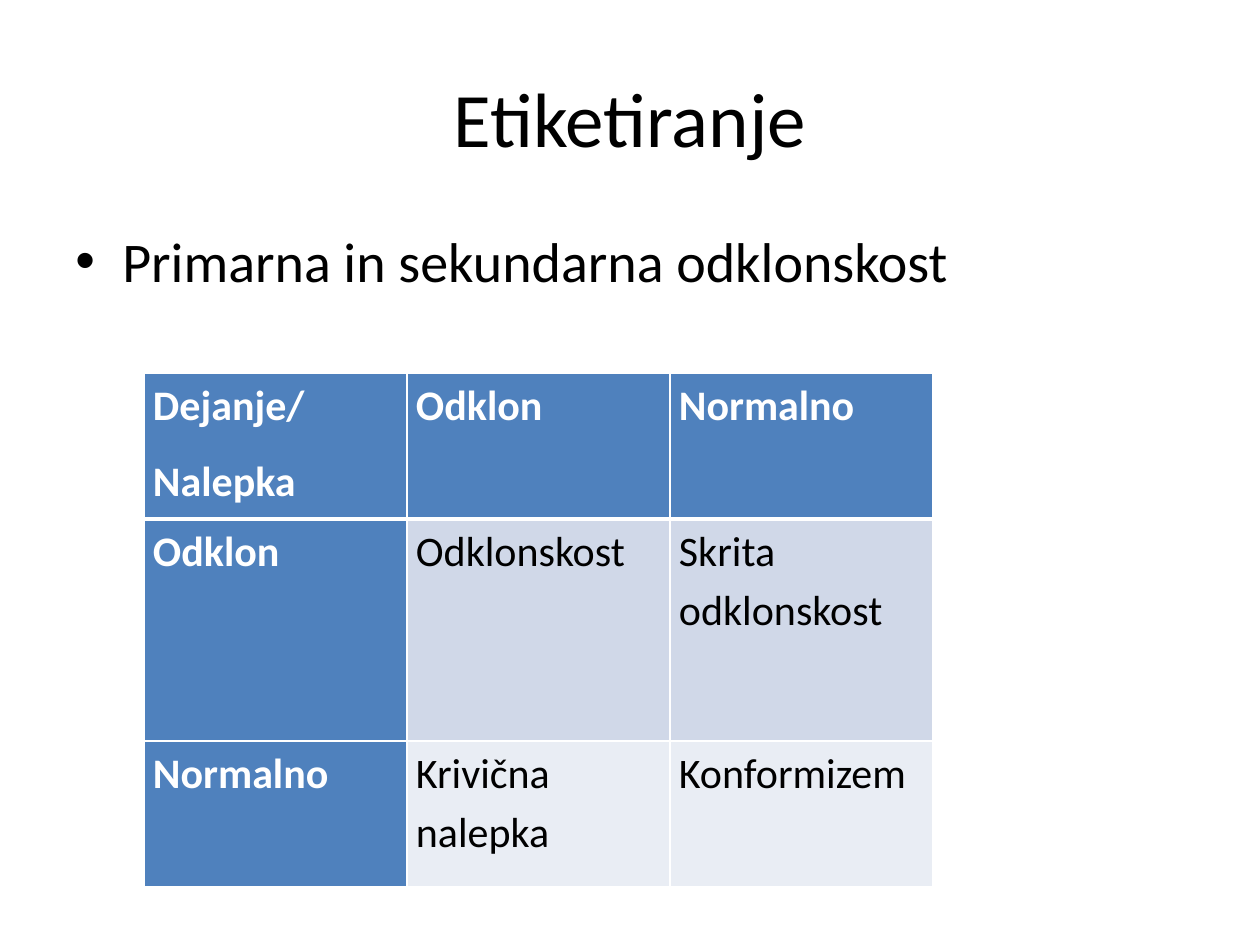
from lxml.etree import SubElement
from pptx import Presentation
from pptx.dml.color import RGBColor
from pptx.enum.text import MSO_ANCHOR, PP_ALIGN
from pptx.oxml.ns import qn
from pptx.util import Emu, Pt

EMU_PER_PX = 914400 / 126
WHITE, BLACK, BLUE = "FFFFFF", "000000", "4F81BD"
BAND_FILLS = {1: "D0D8E8", 2: "E9EDF4"}


def px(length):
    return Emu(round(length * EMU_PER_PX))


def format_runs(paragraph, size, color, bold=False):
    for run in paragraph.runs:
        run.font.name = "Calibri"
        run.font.size = Pt(size)
        run.font.bold = bold
        run.font.color.rgb = RGBColor.from_string(color)


presentation = Presentation()
presentation.slide_width = px(1260)
presentation.slide_height = px(945)
slide = presentation.slides.add_slide(presentation.slide_layouts[6])

# Title
title = slide.shapes.add_textbox(px(63), px(38), px(1134), px(158))
title.text_frame.word_wrap = True
title.text_frame.vertical_anchor = MSO_ANCHOR.MIDDLE
title.text_frame.text = "Etiketiranje"
paragraph = title.text_frame.paragraphs[0]
paragraph.alignment = PP_ALIGN.CENTER
format_runs(paragraph, 44, BLACK)

# Bullet
body = slide.shapes.add_textbox(px(63), px(220), px(1134), px(624))
body.text_frame.word_wrap = True
body.text_frame.text = "Primarna in sekundarna odklonskost"
paragraph = body.text_frame.paragraphs[0]
paragraph.space_before = Pt(6.4)
format_runs(paragraph, 32, BLACK)
properties = paragraph._p.get_or_add_pPr()
properties.set("marL", str(px(47)))
properties.set("indent", str(px(-47)))
SubElement(properties, qn("a:buFont")).set("typeface", "Arial")
SubElement(properties, qn("a:buChar")).set("char", "•")

# Table of act against label
rows = [
    ["Dejanje/\nNalepka", "Odklon", "Normalno"],
    ["Odklon", "Odklonskost", "Skrita odklonskost"],
    ["Normalno", "Krivična nalepka", "Konformizem"],
]
row_heights = [146, 222, 146]
column_width = 263
table = slide.shapes.add_table(
    3, 3, px(144), px(373), px(3 * column_width), px(sum(row_heights))
).table
for column in table.columns:
    column.width = px(column_width)

for row_index, texts in enumerate(rows):
    table.rows[row_index].height = px(row_heights[row_index])
    for column_index, text in enumerate(texts):
        is_header = row_index == 0 or column_index == 0
        cell = table.cell(row_index, column_index)
        cell.margin_left = cell.margin_right = px(9)
        cell.margin_top = cell.margin_bottom = 0

        border_widths = {
            "a:lnL": 1,
            "a:lnR": 1,
            "a:lnT": 3 if row_index == 1 else 1,
            "a:lnB": 3 if row_index == 0 else 1,
        }
        for tag, width in border_widths.items():
            line = SubElement(cell._tc.get_or_add_tcPr(), qn(tag), w=str(Pt(width)))
            line_fill = SubElement(line, qn("a:solidFill"))
            SubElement(line_fill, qn("a:srgbClr"), val=WHITE)

        cell.fill.solid()
        cell.fill.fore_color.rgb = RGBColor.from_string(
            BLUE if is_header else BAND_FILLS[row_index]
        )
        cell.text_frame.text = text
        for paragraph in cell.text_frame.paragraphs:
            paragraph.line_spacing = 1.15
            paragraph.space_after = Pt(10)
            format_runs(paragraph, 24, WHITE if is_header else BLACK, is_header)

presentation.save("out.pptx")
